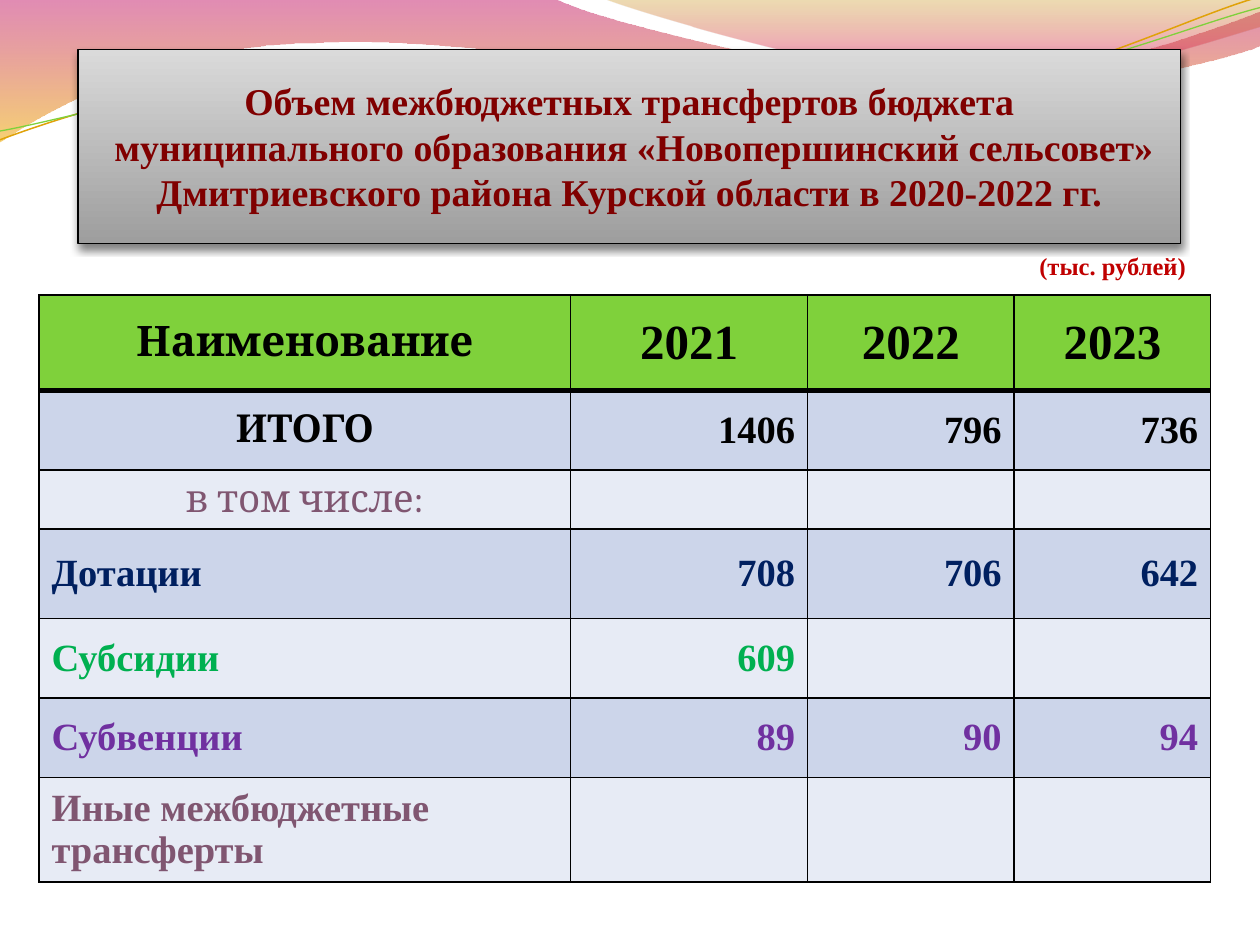
import math
from dataclasses import dataclass

from lxml import etree
from pptx import Presentation
from pptx.dml.color import RGBColor
from pptx.enum.text import MSO_ANCHOR, MSO_AUTO_SIZE, PP_ALIGN
from pptx.oxml import parse_xml
from pptx.oxml.ns import qn
from pptx.util import Inches, Pt

LEFT, CENTER, RIGHT = PP_ALIGN.LEFT, PP_ALIGN.CENTER, PP_ALIGN.RIGHT
MIDDLE = MSO_ANCHOR.MIDDLE
NS = 'xmlns:a="http://schemas.openxmlformats.org/drawingml/2006/main"'


@dataclass(frozen=True)
class Theme:
    serif: str = "Times New Roman"
    cambria: str = "Cambria"
    black: str = "000000"
    title: str = "800000"
    note: str = "C00000"
    header: str = "7FD13B"
    bands: tuple = ("CCD5EA", "E7EBF5")
    mauve: str = "805671"
    navy: str = "002060"
    green: str = "00B050"
    purple: str = "7030A0"
    gold: str = "E0A209"
    title_size: float = 21.6
    note_size: float = 14
    name_size: float = 24
    year_size: float = 28
    body_size: float = 22


T = Theme()

# Waves: start point, then straight (2 numbers) or cubic (6 numbers) segments
WAVE_PINK = [(0, -0.01), (4.4, -0.01), (4.76, 0.17, 6.64, 0.63, 7.58, 0.63),
             (8.53, 0.63, 9.58, 0.26, 10, 0.09), (10.01, 0.36),
             (9.83, 0.44, 8.7, 0.76, 7.46, 0.75),
             (6.22, 0.75, 3.82, 0.28, 2.57, 0.34),
             (1.29, 0.35, 0.46, 0.83, -0.01, 1.13), (0, -0.01)]
WAVE_GOLD = [(4.79, -0.01), (5.09, 0.11, 6.82, 0.62, 7.69, 0.65),
             (8.56, 0.69, 9.61, 0.32, 10, 0.21), (10, 0), (4.79, -0.01)]
LINE_GOLD = [(0, 1.11), (0.48, 0.93, 1.58, 0.57, 2.77, 0.52),
             (3.95, 0.47, 5.93, 0.89, 7.13, 0.8),
             (8.33, 0.71, 9.38, 0.15, 9.98, -0.02)]
LINE_GREEN = [(0, 1.04), (0.47, 0.96, 1.64, 0.61, 2.83, 0.56),
              (4.03, 0.51, 5.97, 0.83, 7.17, 0.75),
              (8.36, 0.67, 9.41, 0.21, 10, 0.06)]
LINE_TURN = -2.7

COLS = [4.22, 1.88, 1.64, 1.56]
HEADER = ["Наименование", "2021", "2022", "2023"]
# Height, colour, bold, name font, name alignment, texts
ROWS = [
    (0.63, T.black, True, T.cambria, CENTER, ["ИТОГО", "1406", "796", "736"]),
    (0.47, T.mauve, False, T.cambria, CENTER, ["в том числе:", "", "", ""]),
    (0.71, T.navy, True, T.serif, LEFT, ["Дотации", "708", "706", "642"]),
    (0.63, T.green, True, T.serif, LEFT, ["Субсидии", "609", "", ""]),
    (0.63, T.purple, True, T.serif, LEFT, ["Субвенции", "89", "90", "94"]),
    (0.83, T.mauve, True, T.serif, LEFT,
     ["Иные межбюджетные трансферты", "", "", ""]),
]
HEADER_HEIGHT = 0.76


def add_run(p, text, size, color, font=T.serif, bold=True):
    r = p.add_run()
    r.text = text
    r.font.size = Pt(size)
    r.font.name = font
    r.font.bold = bold
    r.font.color.rgb = RGBColor.from_string(color)


def set_gradient(sp, stops):
    """Top-to-bottom gradient from (position, colour, opacity) in percent."""
    gs = "".join(
        f'<a:gs pos="{pos * 1000}"><a:srgbClr val="{color}">'
        f'<a:alpha val="{alpha * 1000}"/></a:srgbClr></a:gs>'
        for pos, color, alpha in stops)
    sp.fill.background()
    old = sp.element.spPr.find(qn("a:noFill"))
    old.getparent().replace(old, parse_xml(
        f'<a:gradFill {NS} rotWithShape="1"><a:gsLst>{gs}</a:gsLst>'
        '<a:lin ang="5400000" scaled="0"/></a:gradFill>'))


def draw_curves(sp, segments, frame, turn, closed):
    """Give the outline its cubic segments, measured inside the frame."""
    left, top, width, height = frame
    cx, cy = left + width / 2, top + height / 2
    cos, sin = math.cos(math.radians(-turn)), math.sin(math.radians(-turn))
    outline = next(sp.element.iter(qn("a:path")))
    outline.set("w", str(Inches(width)))
    outline.set("h", str(Inches(height)))
    for child in list(outline):
        outline.remove(child)
    for i, seg in enumerate(segments):
        tag = "cubicBezTo" if len(seg) == 6 else "lnTo" if i else "moveTo"
        step = etree.SubElement(outline, qn(f"a:{tag}"))
        for x, y in zip(seg[::2], seg[1::2]):
            dx, dy = x - cx, y - cy
            etree.SubElement(step, qn("a:pt"),
                             x=str(Inches(dx * cos - dy * sin + width / 2)),
                             y=str(Inches(dx * sin + dy * cos + height / 2)))
    if closed:
        etree.SubElement(outline, qn("a:close"))
    sp.left, sp.top, sp.width, sp.height = map(Inches, frame)
    sp.rotation = turn % 360


def add_wave(s, segments, frame, stops=None, line=None, width=0, turn=0):
    ends = [(Inches(seg[-2]), Inches(seg[-1])) for seg in segments]
    builder = s.shapes.build_freeform(*ends[0], scale=1.0)
    builder.add_line_segments(ends[1:], close=False)
    sp = builder.convert_to_shape()
    draw_curves(sp, segments, frame, turn, closed=stops is not None)
    sp.shadow.inherit = False
    if stops:
        set_gradient(sp, stops)
        sp.line.fill.background()
    else:
        sp.fill.background()
        sp.line.color.rgb = RGBColor.from_string(line)
        sp.line.width = Pt(width)


def fill_cell(cell, text, fill, align, size, color, font, bold, **borders):
    tcPr = cell._tc.get_or_add_tcPr()
    for side in "LRTB":
        ln = etree.SubElement(tcPr, qn(f"a:ln{side}"),
                              w=str(Pt(borders.get(side, 1))))
        paint = etree.SubElement(ln, qn("a:solidFill"))
        etree.SubElement(paint, qn("a:srgbClr"), val=T.black)
    cell.fill.solid()
    cell.fill.fore_color.rgb = RGBColor.from_string(fill)
    if text:
        cell.vertical_anchor = MIDDLE
        p = cell.text_frame.paragraphs[0]
        p.alignment = align
        add_run(p, text, size, color, font, bold)


def add_transfer_table(s):
    heights = [HEADER_HEIGHT] + [row[0] for row in ROWS]
    table = s.shapes.add_table(
        len(heights), len(COLS), Inches(0.31), Inches(2.34),
        Inches(sum(COLS)), Inches(sum(heights))).table
    for column, width in zip(table.columns, COLS):
        column.width = Inches(width)
    for row, height in zip(table.rows, heights):
        row.height = Inches(height)
    for j, text in enumerate(HEADER):
        size, font = (T.year_size, T.serif) if j else (T.name_size, T.cambria)
        fill_cell(table.cell(0, j), text, T.header, CENTER, size, T.black,
                  font, True, B=3)
    for i, (_, color, bold, name_font, name_align, texts) in enumerate(ROWS):
        for j, text in enumerate(texts):
            align, font = (RIGHT, T.serif) if j else (name_align, name_font)
            fill_cell(table.cell(i + 1, j), text, T.bands[i % 2], align,
                      T.body_size, color, font, bold, T=1 if i else 3)


def add_title(s):
    sp = s.shapes.title
    s.shapes.element.append(sp.element)  # in front of the waves
    sp.left, sp.top, sp.width, sp.height = map(Inches, (0.62, 0.39, 8.75, 1.54))
    set_gradient(sp, [(0, "DADADA", 100), (100, "9E9E9E", 100)])
    sp.line.color.rgb = RGBColor.from_string(T.black)
    sp.line.width = Pt(0.75)
    sp.element.spPr.append(parse_xml(
        f'<a:effectLst {NS}><a:outerShdw blurRad="57150" dist="38100" '
        'dir="5400000" algn="ctr" rotWithShape="0"><a:srgbClr val="000000">'
        '<a:alpha val="50000"/></a:srgbClr></a:outerShdw></a:effectLst>'))
    tf = sp.text_frame
    tf.word_wrap = True
    tf.auto_size = MSO_AUTO_SIZE.NONE
    tf.vertical_anchor = MIDDLE
    p = tf.paragraphs[0]
    p.alignment = CENTER
    add_run(p, "Объем межбюджетных трансфертов бюджета", T.title_size, T.title)
    p.add_line_break()
    add_run(p, " муниципального образования «Новопершинский сельсовет» "
               "Дмитриевского района Курской области в 2020-2022 гг.",
            T.title_size, T.title)


def add_note(s):
    sp = s.shapes.add_textbox(*map(Inches, (8.15, 1.94, 1.42, 0.33)))
    tf = sp.text_frame
    tf.word_wrap = True
    tf.auto_size = MSO_AUTO_SIZE.SHAPE_TO_FIT_TEXT
    add_run(tf.paragraphs[0], "(тыс. рублей)", T.note_size, T.note)


def main():
    prs = Presentation()
    prs.slide_width, prs.slide_height = Inches(10), Inches(7.5)
    s = prs.slides.add_slide(prs.slide_layouts[5])
    # Decorative waves
    add_wave(s, WAVE_PINK, (-0.01, -0.01, 10.02, 1.14),
             [(0, "BD0059", 45), (100, "F0AB00", 55)])
    add_wave(s, WAVE_GOLD, (4.79, -0.01, 5.21, 0.7),
             [(0, "C38B00", 30), (80, "E1006B", 45)])
    add_wave(s, LINE_GOLD, (-0.02, 0.22, 10.02, 0.71),
             line=T.gold, width=0.85, turn=LINE_TURN)
    add_wave(s, LINE_GREEN, (-0.02, 0.3, 10.03, 0.58),
             line=T.header, width=0.75, turn=LINE_TURN)
    # Content
    add_transfer_table(s)
    add_title(s)
    add_note(s)
    prs.save("out.pptx")


if __name__ == "__main__":
    main()
